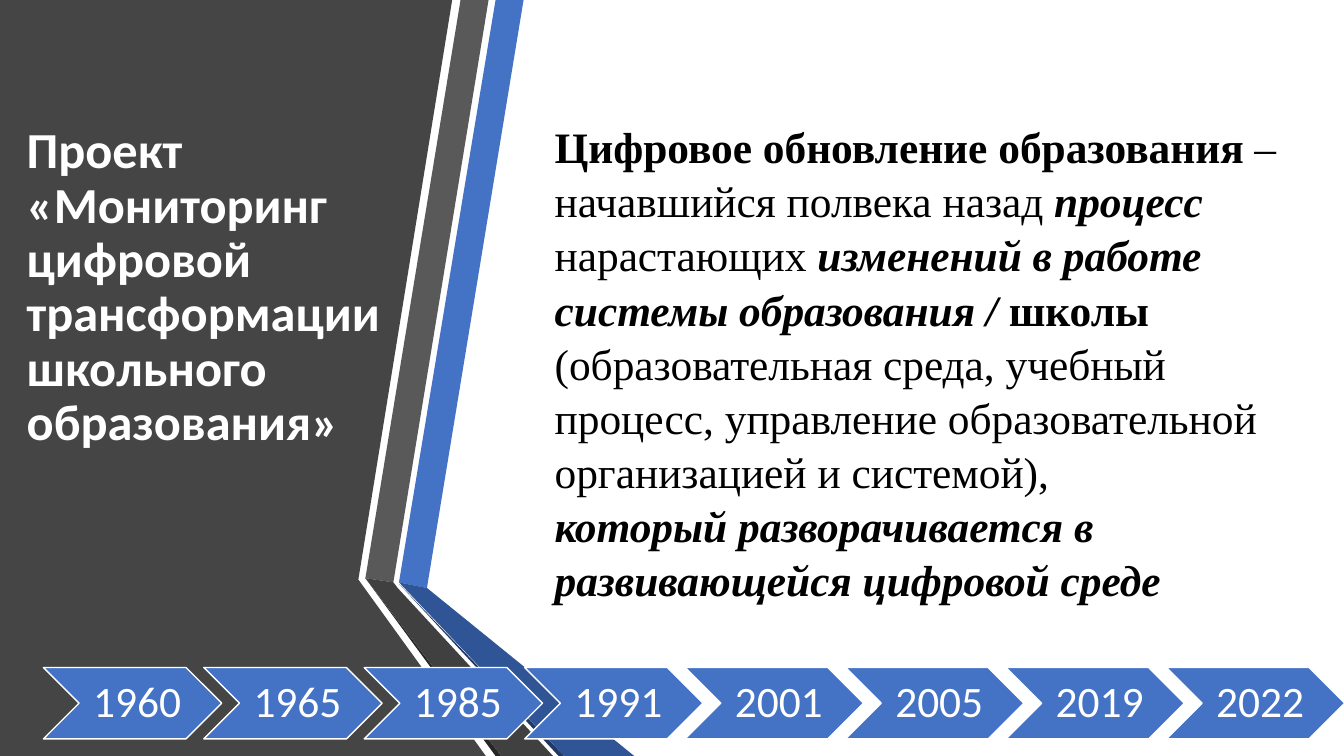
from pptx import Presentation
from pptx.dml.color import RGBColor
from pptx.enum.shapes import MSO_SHAPE
from pptx.enum.text import MSO_ANCHOR, MSO_AUTO_SIZE, PP_ALIGN
from pptx.util import Pt

CHEVRON = MSO_SHAPE.CHEVRON
MIDDLE = MSO_ANCHOR.MIDDLE
NO_FIT = MSO_AUTO_SIZE.NONE
LEFT, CENTER = PP_ALIGN.LEFT, PP_ALIGN.CENTER

# Content
COLORS = {
    "dark": "454545", "blue": "4472C4", "grey": "595959", "black": "262626",
    "navy": "203864", "deep": "2F5597", "fold": "404040",
    "white": "FFFFFF", "text": "000000",
}
# Runs of the title: text, bold, italic; None is a line break
TITLE = [
    ("Цифровое обновление образования ", True, False),
    ("– начавшийся полвека назад ", False, False),
    ("процесс ", True, True),
    ("нарастающих ", False, False),
    ("изменений в работе системы образования / ", True, True),
    ("школы ", True, False),
    ("(образовательная среда, учебный процесс, управление образовательной "
     "организацией и системой), ", False, False),
    None,
    ("который разворачивается в развивающейся цифровой среде", True, True),
]
PROJECT = ["Проект «Мониторинг цифровой трансформации", "школьного образования»"]
YEARS = ["1960", "1965", "1985", "1991", "2001", "2005", "2019", "2022"]
# Side panel and folded ribbons, corners in points
BANDS = [
    ("dark", [(0, 0), (323, 0), (256.2, 414.5), (347, 540), (0, 540)]),
    ("blue", [(285, 416), (304.6, 419.8), (373.6, 0), (353.6, 0)]),
    ("grey", [(349, 0), (329, 0), (261.4, 412.6), (281, 415.5)]),
    ("black", [(261.4, 412.6), (353.5, 540), (358, 540)]),
    ("navy", [(285, 417), (399, 540), (403, 540)]),
    ("deep", [(285, 416), (403, 540), (453, 540), (304.6, 419.8)]),
    ("fold", [(261.4, 412.6), (358, 540), (394.6, 540), (284.4, 420), (281, 415.5)]),
]
ROW_X, ROW_Y, STEP = 31, 476.8, 114.6
ARROW_W, ARROW_H = 127.4, 51


def color(key):
    return RGBColor.from_string(COLORS[key])


def paint(shape, key):
    shape.shadow.inherit = False
    shape.fill.solid()
    shape.fill.fore_color.rgb = color(key)


def set_frame(frame):
    frame.word_wrap = True
    frame.auto_size = NO_FIT
    frame.vertical_anchor = MIDDLE


def add_run(para, text, face, size, key, bold=False, slant=False):
    run = para.add_run()
    run.text = text
    font = run.font
    font.name, font.size = face, Pt(size)
    font.bold, font.italic = bold, slant
    font.color.rgb = color(key)


def main():
    deck = Presentation()
    deck.slide_width, deck.slide_height = Pt(960), Pt(540)
    slide = deck.slides.add_slide(deck.slide_layouts[5])
    shapes = slide.shapes

    # Panel and ribbons
    for key, dots in BANDS:
        pen = shapes.build_freeform(*dots[0], scale=Pt(1))
        pen.add_line_segments(dots[1:], close=True)
        band = pen.convert_to_shape()
        paint(band, key)
        band.line.fill.background()

    # Title
    title = shapes.title
    title.left, title.top = Pt(389), Pt(48)
    title.width, title.height = Pt(565), Pt(421)
    set_frame(title.text_frame)
    para = title.text_frame.paragraphs[0]
    para.alignment, para.line_spacing = LEFT, 1.04
    for part in TITLE:
        if part is None:
            para.add_line_break()
        else:
            text, bold, slant = part
            add_run(para, text, "Times New Roman", 31, "text", bold, slant)

    # Project name
    box = shapes.add_textbox(Pt(12), Pt(21), Pt(315), Pt(370))
    frame = box.text_frame
    set_frame(frame)
    for i, text in enumerate(PROJECT):
        para = frame.add_paragraph() if i else frame.paragraphs[0]
        para.line_spacing = 0.9
        add_run(para, text, "Calibri", 36, "white", True)

    # Timeline
    for i, year in enumerate(YEARS):
        arrow = shapes.add_shape(CHEVRON, Pt(ROW_X + i * STEP), Pt(ROW_Y),
                                 Pt(ARROW_W), Pt(ARROW_H))
        paint(arrow, "blue")
        arrow.line.color.rgb = color("white")
        arrow.line.width = Pt(1)
        frame = arrow.text_frame
        set_frame(frame)
        frame.margin_left = Pt(10)
        frame.margin_right = frame.margin_top = frame.margin_bottom = Pt(3.6)
        para = frame.paragraphs[0]
        para.alignment, para.line_spacing = CENTER, 0.9
        add_run(para, year, "Calibri", 31, "white")

    deck.save("out.pptx")


if __name__ == "__main__":
    main()
